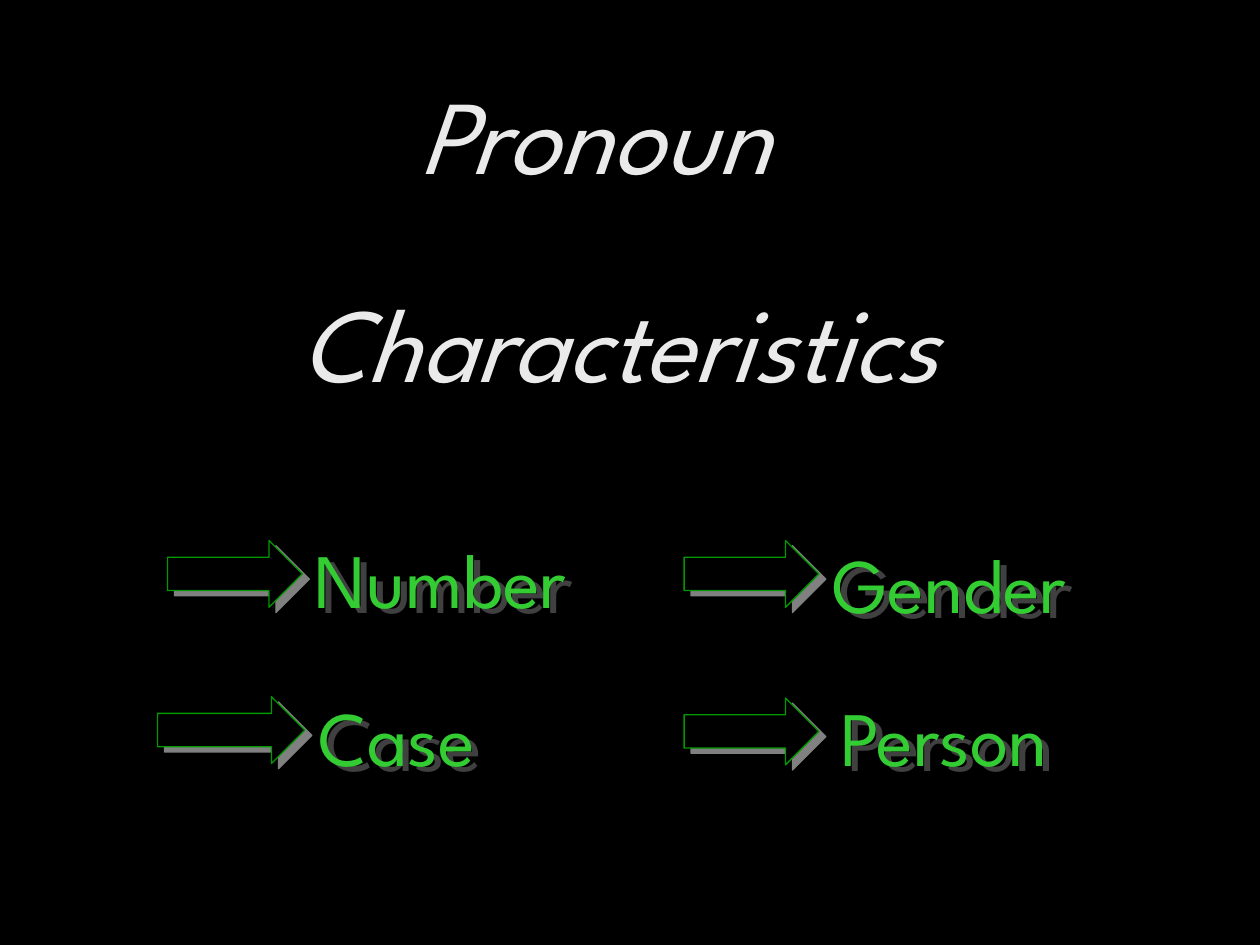
from lxml import etree
from pptx import Presentation
from pptx.dml.color import RGBColor
from pptx.enum.shapes import MSO_SHAPE
from pptx.enum.text import MSO_ANCHOR, MSO_AUTO_SIZE, PP_ALIGN
from pptx.oxml.ns import qn
from pptx.util import Inches, Pt

ARROW = MSO_SHAPE.RIGHT_ARROW
TOP = MSO_ANCHOR.TOP
FIXED = MSO_AUTO_SIZE.NONE
GROW = MSO_AUTO_SIZE.SHAPE_TO_FIT_TEXT
LEFT, CENTER = PP_ALIGN.LEFT, PP_ALIGN.CENTER
rgb = RGBColor.from_string


def write(shape, text, color, align, form, frame):
    body = shape.text_frame
    for key, val in frame.items():
        setattr(body, key, val)
    body.text = text
    par = body.paragraphs[0]
    par.alignment = align
    font = par.runs[0].font
    font.color.rgb = rgb(color)
    for key, val in form.items():
        setattr(font, key, val)


def shade(shape, color):
    shape.shadow.inherit = False
    fx = shape._element.spPr.find(qn("a:effectLst"))
    drop = etree.SubElement(fx, qn("a:outerShdw"), dist=str(Pt(5)),
                            dir=str(37 * 60000), algn="ctr", rotWithShape="0")
    etree.SubElement(drop, qn("a:srgbClr"), val=color)


deck = Presentation()
deck.slide_width, deck.slide_height = Inches(10), Inches(7.5)
slide = deck.slides.add_slide(deck.slide_layouts[5])
slide.background.fill.solid()
slide.background.fill.fore_color.rgb = rgb("000000")

head = {"name": "League Spartan", "size": Pt(60), "italic": True}
fixed = {"word_wrap": False, "auto_size": FIXED, "vertical_anchor": TOP}
title = slide.shapes.title
place = {"left": 2.54, "top": 0.5, "width": 4.36, "height": 1.31}
for key, val in place.items():
    setattr(title, key, Inches(val))
write(title, "Pronoun", "EAEAEA", CENTER, head, fixed)

lower = slide.shapes.add_textbox(Inches(1.5), Inches(2.15), Inches(6.83), Inches(1.52))
write(lower, "Characteristics", "EAEAEA", CENTER, head, fixed)

label = {"name": "League Spartan", "size": Pt(44)}
grow = {"word_wrap": True, "auto_size": GROW, "vertical_anchor": TOP}
traits = [
    ("Number", 2.4, 4.17, 2.5, 1.33, 4.29, 1.07),
    ("Case", 2.43, 5.42, 1.73, 1.25, 5.53, 1.17),
    ("Gender", 6.51, 4.21, 2.42, 5.43, 4.29, 1.07),
    ("Person", 6.57, 5.42, 2.25, 5.43, 5.54, 1.07),
]
for text, x, y, wide, left, top, span in traits:
    box = slide.shapes.add_textbox(Inches(x), Inches(y), Inches(wide), Inches(0.83))
    write(box, text, "33CC33", LEFT, label, grow)
    shade(box, "404040")

    arrow = slide.shapes.add_shape(ARROW, Inches(left), Inches(top), Inches(span), Inches(0.53))
    arrow.fill.solid()
    arrow.fill.fore_color.rgb = rgb("000000")
    arrow.line.color.rgb = rgb("009900")
    arrow.line.width = Pt(0.75)
    shade(arrow, "808080")

deck.save("out.pptx")
